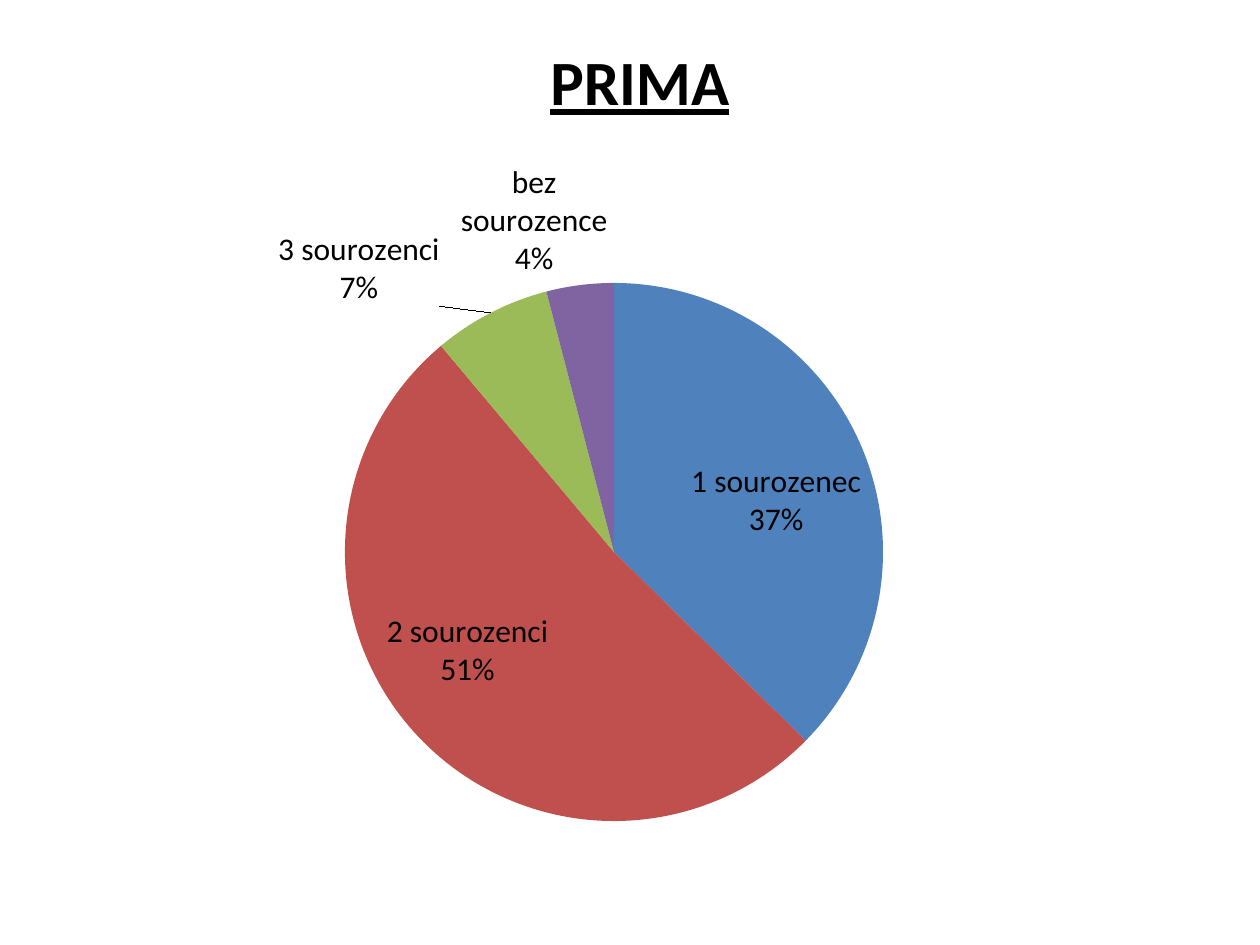
from pptx import Presentation, oxml
from pptx import util as u
from pptx.chart.data import CategoryChartData
from pptx.dml.color import RGBColor
from pptx.enum import chart as charts, text
from pptx.oxml.ns import nsdecls

FONT = "Calibri"
BLACK = "000000"
SIBLINGS = [
    ("1 sourozenec", 37, "4F81BD", "ctr", 0.04, 0),
    ("2 sourozenci", 51, "C0504D", "ctr", -0.05, 0.01),
    ("3 sourozenci", 7, "9BBB59", "outEnd", -0.05, 0),
    ("bez sourozence", 4, "8064A2", "outEnd", 0.03, 0),
]


def color(value):
    """Turn a hex string into a colour."""
    return RGBColor.from_string(value)


def style_font(font, size):
    """Apply the slide's typeface in black at the given size."""
    font.name = FONT
    font.size = u.Pt(size)
    font.color.rgb = color(BLACK)


def add_title(page, wording):
    """Add the centred, underlined heading."""
    box = page.shapes.add_textbox(u.Cm(1.7), u.Cm(0.74), u.Cm(22.4), u.Cm(1.8))
    box.text_frame.word_wrap = True
    para = box.text_frame.paragraphs[0]
    para.text = wording
    para.alignment = text.PP_ALIGN.CENTER
    span = para.runs[0]
    style_font(span.font, 36)
    span.font.bold = True
    span.font.underline = True


def place_plot(chart, left, top, width, height):
    """Fix the inner plot area as fractions of the chart."""
    area = chart._chartSpace.chart.plotArea
    for old in area.xpath("c:layout"):
        area.remove(old)
    area.insert(0, oxml.parse_xml(
        f'<c:layout {nsdecls("c")}><c:manualLayout><c:layoutTarget val="inner"/>'
        '<c:xMode val="edge"/><c:yMode val="edge"/>'
        f'<c:x val="{left}"/><c:y val="{top}"/><c:w val="{width}"/><c:h val="{height}"/>'
        '</c:manualLayout></c:layout>'))


def make_label(index, position, shift_x, shift_y):
    """Build a two-line label with category and percentage."""
    return oxml.parse_xml(
        f'<c:dLbl {nsdecls("c")}><c:idx val="{index}"/>'
        f'<c:layout><c:manualLayout><c:x val="{shift_x}"/><c:y val="{shift_y}"/>'
        '</c:manualLayout></c:layout>'
        '<c:numFmt formatCode="0&quot;%&quot;" sourceLinked="0"/>'
        f'<c:dLblPos val="{position}"/><c:showLegendKey val="0"/><c:showVal val="1"/>'
        '<c:showCatName val="1"/><c:showSerName val="0"/><c:showPercent val="0"/>'
        '<c:showBubbleSize val="0"/><c:separator>\n</c:separator></c:dLbl>')


def add_pie(page, rows):
    """Add the pie chart of siblings with its slice labels."""
    data = CategoryChartData()
    data.categories = [row[0] for row in rows]
    data.add_series("Series 1", [row[1] for row in rows])
    chart = page.shapes.add_chart(
        charts.XL_CHART_TYPE.PIE, u.Cm(2.49), u.Cm(2.92), u.Cm(19.2), u.Cm(14.66), data).chart
    chart.has_legend = False
    chart.has_title = False
    style_font(chart.font, 18)
    place_plot(chart, 0.23, 0.19, 0.57, 0.74)
    plot = chart.plots[0]
    plot.vary_by_categories = True
    series = plot.series[0]
    labels = series.data_labels
    style_font(labels.font, 18)
    for index, (_, _, shade, position, shift_x, shift_y) in enumerate(rows):
        fill = series.points[index].format.fill
        fill.solid()
        fill.fore_color.rgb = color(shade)
        labels._element.insert(index, make_label(index, position, shift_x, shift_y))


def main():
    """Build and save the slide."""
    deck = Presentation()
    deck.slide_width, deck.slide_height = u.Cm(25.4), u.Cm(19.05)
    page = deck.slides.add_slide(deck.slide_layouts[6])
    add_pie(page, SIBLINGS)
    add_title(page, "PRIMA")
    deck.save("out.pptx")


if __name__ == "__main__":
    main()
